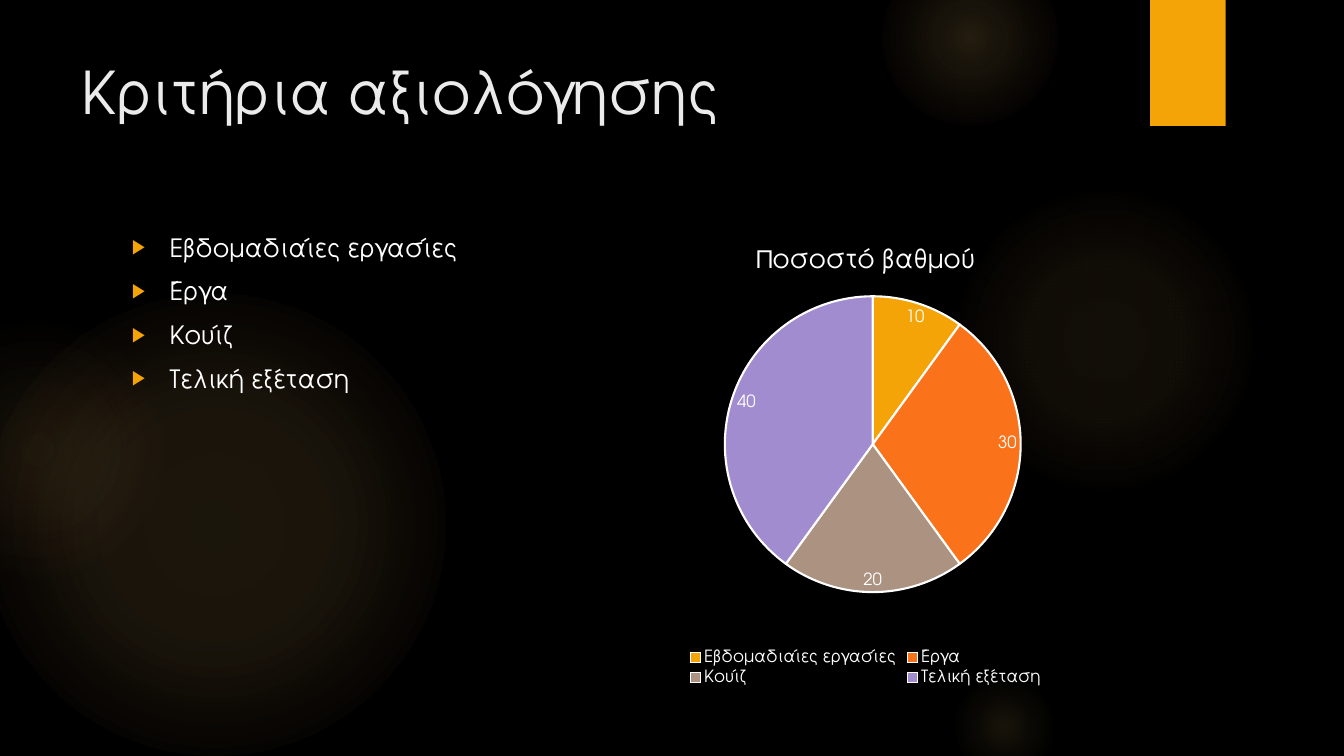
"""Builds the grading criteria slide with a bullet list and a pie chart."""
from lxml import etree
from pptx import Presentation
from pptx import util as u
from pptx.chart import data
from pptx.dml.color import RGBColor
from pptx.enum import chart as ch, shapes, text
from pptx.oxml import parse_xml
from pptx.oxml.ns import nsdecls, qn

Pt = u.Pt
FACE = "TeX Gyre Adventor"
HUES = {"back": "000000", "title": "EBEBEB", "text": "FFFFFF", "gold": "F5A408",
        "glow": "FAC96A", "rose": "F59B74", "fire": "FA731A", "clay": "AB9281",
        "lilac": "A18CD0"}
GRADES = [("Εβδομαδιαίες εργασίες", 10, "gold"), ("Έργα", 30, "fire"),
          ("Κουίζ", 20, "clay"), ("Τελική εξέταση", 40, "lilac")]
GLOWS = [((-12, 210, 330), (11, 10), 75, "glow"), ((-66, 228, 186), (8, 5), 71, "rose"),
         ((678, 132, 222), (7, 6), 69, "glow"), ((630, -36, 126), (14, 7), 73, "glow"),
         ((678, 480, 78), (10, 5), 66, "glow")]


def hue(name):
    return RGBColor.from_string(HUES[name])


def apply(item, form):
    for key, val in form.items():
        setattr(item, key, val)


def style(font, size, tint="text"):
    apply(font, {"name": FACE, "size": Pt(size), "bold": False})
    font.color.rgb = hue(tint)


def place(item, *box):
    apply(item, dict(zip(("left", "top", "width", "height"), map(Pt, box))))


def plain(slide, kind, *box):
    shape = slide.shapes.add_shape(kind, *map(Pt, box))
    shape.shadow.inherit = False
    shape.line.fill.background()
    return shape


def glow(slide, box, alphas, edge, rim):
    left, top, size = box
    shape = plain(slide, shapes.MSO_SHAPE.OVAL, left, top, size, size)
    shape.fill.background()
    mid = 31 if edge == 66 else 36
    stops = [(0, "glow", alphas[0]), (mid, "glow", alphas[1]), (edge, rim, 0)]
    marks = "".join(
        f'<a:gs pos="{pos * 1000}"><a:srgbClr val="{HUES[tint]}">'
        f'<a:alpha val="{alpha * 1000}"/></a:srgbClr></a:gs>'
        for pos, tint, alpha in stops)
    blend = parse_xml(
        f'<a:gradFill {nsdecls("a")} rotWithShape="1"><a:gsLst>{marks}</a:gsLst>'
        '<a:path path="circle"><a:fillToRect l="50000" t="50000" r="50000" b="50000"/>'
        '</a:path></a:gradFill>')
    props = shape.element.spPr
    props.replace(props.find(qn("a:noFill")), blend)


def ribbon(slide):
    shape = plain(slide, shapes.MSO_SHAPE.RECTANGLE, 821.5, 0, 54, 90)
    shape.fill.solid()
    shape.fill.fore_color.rgb = hue("gold")
    shape.element.spPr.find(qn("a:effectLst")).append(parse_xml(
        f'<a:outerShdw {nsdecls("a")} blurRad="{Pt(3)}" dist="{Pt(2)}" dir="5400000" '
        f'rotWithShape="0"><a:srgbClr val="{HUES["back"]}"><a:alpha val="45000"/>'
        '</a:srgbClr></a:outerShdw>'))


def write(holder, lines, size, tint, box, form):
    place(holder, *box)
    frame = holder.text_frame
    frame.text = "\n".join(lines)
    apply(frame, {"word_wrap": True, "vertical_anchor": text.MSO_ANCHOR.TOP,
                  "auto_size": text.MSO_AUTO_SIZE.NONE})
    for para in frame.paragraphs:
        apply(para, {"alignment": text.PP_ALIGN.LEFT, **form})
        style(para.runs[0].font, size, tint)
    holder.element.getparent().append(holder.element)


def bullet(para):
    props = para._p.get_or_add_pPr()
    apply_in = {"marL": Pt(27), "indent": Pt(-27)}
    for key, val in apply_in.items():
        props.set(key, str(val))
    tint = etree.SubElement(props, qn("a:buClr"))
    etree.SubElement(tint, qn("a:srgbClr"), val=HUES["gold"])
    etree.SubElement(props, qn("a:buSzPct"), val="80000")
    etree.SubElement(props, qn("a:buChar"), char="▶")


def layout(chart, *box):
    area = chart.element.find(".//" + qn("c:plotArea"))
    for old in area.findall(qn("c:layout")):
        area.remove(old)
    sides = "".join(f'<c:{key} val="{val}"/>' for key, val in zip("xywh", box))
    area.insert(0, parse_xml(
        f'<c:layout {nsdecls("c")}><c:manualLayout><c:layoutTarget val="inner"/>'
        f'<c:xMode val="edge"/><c:yMode val="edge"/>{sides}</c:manualLayout></c:layout>'))


def pie(slide, name, *box):
    names, vals, tints = zip(*GRADES)
    feed = data.CategoryChartData()
    feed.categories = names
    feed.add_series(name, vals)
    chart = slide.shapes.add_chart(ch.XL_CHART_TYPE.PIE, *map(Pt, box), feed).chart
    style(chart.font, 10)
    apply(chart, {"has_title": True, "has_legend": True})
    head = chart.chart_title.text_frame
    head.text = name
    style(head.paragraphs[0].runs[0].font, 18.6)
    apply(chart.legend, {"position": ch.XL_LEGEND_POSITION.BOTTOM,
                         "include_in_layout": False})
    style(chart.legend.font, 12)
    plot = chart.plots[0]
    apply(plot, {"vary_by_categories": True, "has_data_labels": True})
    apply(plot.data_labels, {"show_value": True, "show_percentage": False,
                             "position": ch.XL_LABEL_POSITION.BEST_FIT})
    style(plot.data_labels.font, 12)
    for spot, tint in enumerate(tints):
        form = plot.series[0].points[spot].format
        form.fill.solid()
        form.fill.fore_color.rgb = hue(tint)
        form.line.color.rgb = hue("text")
        form.line.width = Pt(1.5)
    layout(chart, 0.21, 0.15, 0.61, 0.64)


def main():
    deck = Presentation()
    apply(deck, {"slide_width": Pt(960), "slide_height": Pt(540)})
    slide = deck.slides.add_slide(deck.slide_layouts[1])
    slide.background.fill.solid()
    slide.background.fill.fore_color.rgb = hue("back")
    for args in GLOWS:
        glow(slide, *args)
    ribbon(slide)
    title, body = slide.placeholders
    write(title, ["Κριτήρια αξιολόγησης"], 42, "title", (51, 36, 741, 110), {})
    write(body, [grade[0] for grade in GRADES], 18, "text", (87, 162, 346.5, 330.5),
          {"space_before": Pt(3.6), "space_after": Pt(6)})
    for para in body.text_frame.paragraphs:
        bullet(para)
    pie(slide, "Ποσοστό βαθμού", 445, 162, 346.5, 330.5)
    deck.save("out.pptx")


if __name__ == "__main__":
    main()
